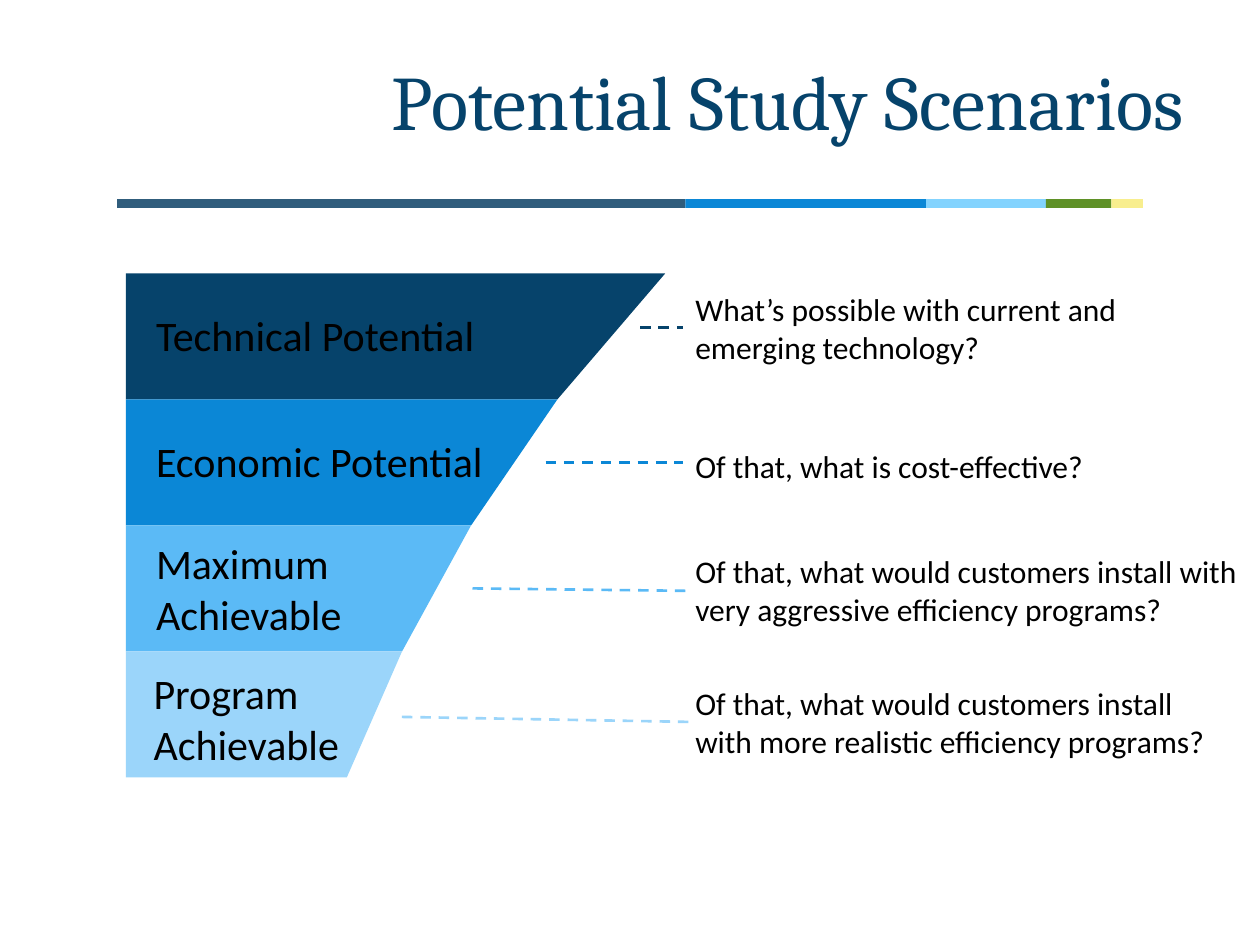
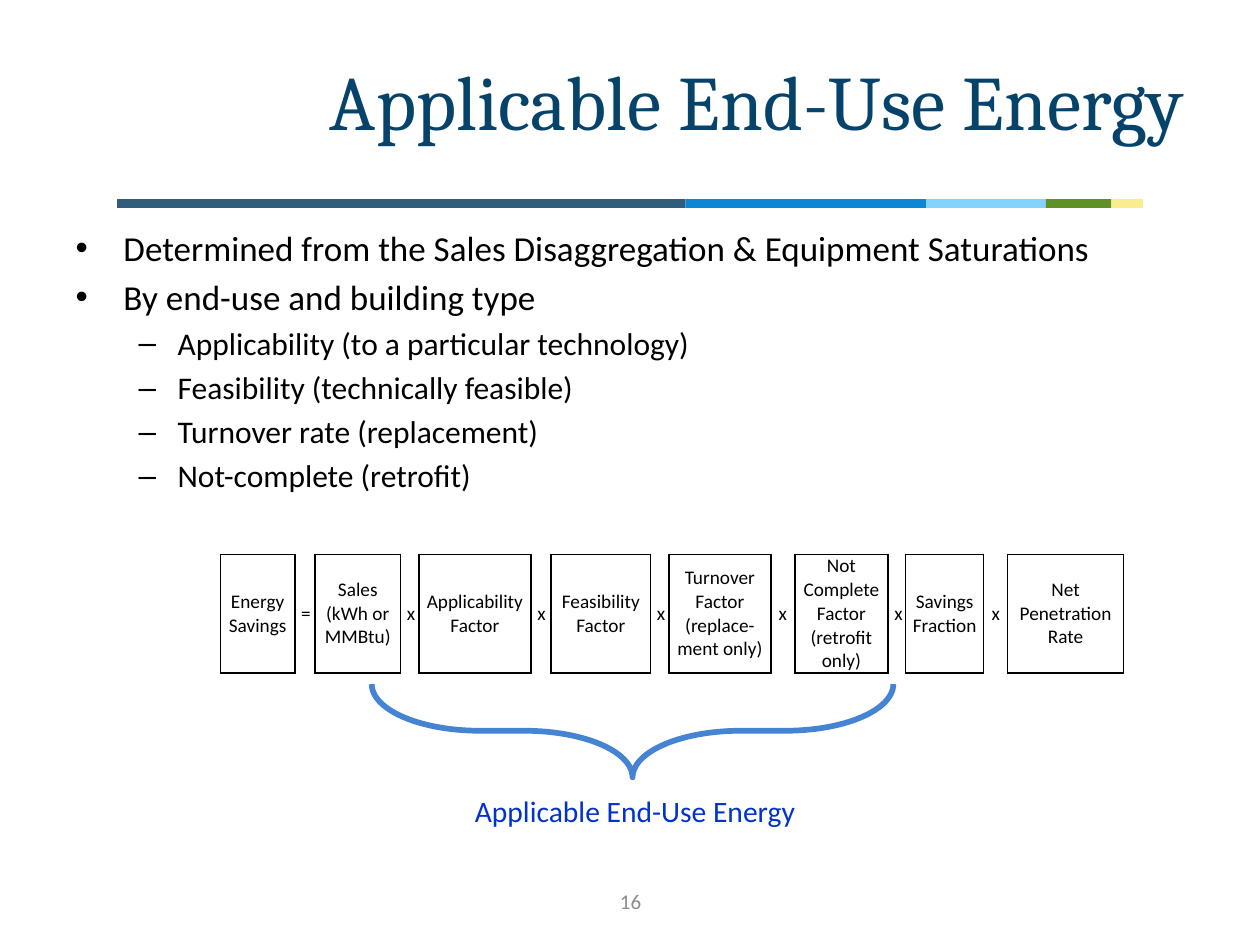
import dataclasses
import typing

import lxml.etree
import pptx
import pptx.dml.color
import pptx.enum.dml
import pptx.enum.shapes
import pptx.enum.text
import pptx.oxml.ns
import pptx.util

Shapes = pptx.enum.shapes.MSO_SHAPE
Align = pptx.enum.text.PP_ALIGN
Anchor = pptx.enum.text.MSO_ANCHOR

# The slide is a grid of 100 columns and 75 rows of square cells.
SLIDE_WIDTH, SLIDE_HEIGHT = pptx.util.Inches(10), pptx.util.Inches(7.5)
CELL = SLIDE_WIDTH // 100

HEADING_FONT, BODY_FONT = "Cambria", "Calibri"
NAVY, BLUE, BLACK, WHITE = "06436B", "0B87D6", "000000", "FFFFFF"
SKY, PALE = "5BBAF6", "9BD5FA"
BRACE_BLUE, CAPTION_BLUE, GREY = "4584D3", "0033CC", "8C8C8C"


class Area(typing.NamedTuple):
    left: float
    top: float
    width: float
    height: float


class Stripe(typing.NamedTuple):
    width: float
    colour: str


class Point(typing.NamedTuple):
    column: float
    row: float


@dataclasses.dataclass(frozen=True)
class Layer:
    label: str
    label_area: Area
    question: str
    question_area: Area
    colour: str
    link_start: Point
    link_end: Point


class Factor(typing.NamedTuple):
    name: str
    width: float
    operator: str = ""
    operator_width: float = 0


class Bullet(typing.NamedTuple):
    text: str
    level: int = 0


class BulletStyle(typing.NamedTuple):
    symbol: str
    size: float
    margin: float
    hanging: float


TITLE_AREA = Area(16.9, 1.7, 78.1, 12.5)
BAND_LEFT, BAND_TOP, BAND_HEIGHT = 9.3, 15.8, 0.7
STRIPES = (
    Stripe(45.1, "305D7C"),
    Stripe(19.1, BLUE),
    Stripe(9.5, "83D3FE"),
    Stripe(5.2, "5F9127"),
    Stripe(2.5, "F8EE8E"),
)

FUNNEL = Area(10, 21.7, 42.8, 10)
FUNNEL_TAPER = 0.8  # each layer is this share of the one above
LAYERS = (
    Layer("Technical Potential", Area(11.4, 24.1, 29.5, 5),
          "What’s possible with current and emerging technology?",
          Area(54.2, 22.5, 44.2, 7.1), NAVY, Point(50.8, 26), Point(54.2, 26)),
    Layer("Economic Potential", Area(11.4, 34.1, 29.5, 5),
          "Of that, what is cost-effective?",
          Area(54.2, 35, 39.2, 7.1), BLUE, Point(43.3, 36.7), Point(54.2, 36.7)),
    Layer("Maximum Achievable", Area(11.4, 42.2, 21.1, 9.1),
          "Of that, what would customers install with very aggressive efficiency programs?",
          Area(54.2, 43.3, 45, 7.1), SKY, Point(37.5, 46.7), Point(55, 46.9)),
    Layer("Program Achievable", Area(11.2, 52.5, 21.2, 9.1),
          "Of that, what would customers install with more realistic efficiency programs?",
          Area(54.2, 53.8, 43.3, 7.1), PALE, Point(31.9, 56.9), Point(55, 57.3)),
)

BODY_AREA = Area(5, 17.5, 90, 49.5)
BULLET_STYLES = (BulletStyle("•", 20, 3.8, 3.8), BulletStyle("–", 18, 8.1, 3.1))
BULLETS = (
    Bullet("Determined from the Sales Disaggregation & Equipment Saturations"),
    Bullet("By end-use and building type"),
    Bullet("Applicability (to a particular technology)", 1),
    Bullet("Feasibility (technically feasible)", 1),
    Bullet("Turnover rate (replacement)", 1),
    Bullet("Not-complete (retrofit)", 1),
)

FORMULA_AREA = Area(17.5, 44, 71.7, 9.4)
FACTORS = (
    Factor("Energy Savings", 5.9, "=", 1.6),
    Factor("Sales (kWh or MMBtu)", 6.8, "x", 1.45),
    Factor("Applicability Factor", 8.9, "x", 1.6),
    Factor("Feasibility Factor", 7.9, "x", 1.45),
    Factor("Turnover Factor (replace-ment only)", 8.1, "x", 1.9),
    Factor("Not Complete Factor (retrofit only)", 7.4, "x", 1.4),
    Factor("Savings Fraction", 6.2, "x", 1.9),
    Factor("Net Penetration Rate", 9.2),
)


def colour_of(code: str) -> pptx.dml.color.RGBColor:
    return pptx.dml.color.RGBColor.from_string(code)


def cells(count: float) -> int:
    return round(count * CELL)


def emu(area: Area) -> list[int]:
    return [cells(length) for length in area]


def format_paragraph(para, size: float, colour: str, align=Align.LEFT, font: str = BODY_FONT) -> None:
    para.alignment = align
    for span in para.runs:
        span.font.name = font
        span.font.size = pptx.util.Pt(size)
        span.font.color.rgb = colour_of(colour)


def move(shape, area: Area) -> None:
    shape.left, shape.top, shape.width, shape.height = emu(area)


def add_text(page, text: str, area: Area, size: float, colour: str = BLACK,
             align=Align.LEFT, anchor=Anchor.TOP) -> None:
    frame = page.shapes.add_textbox(*emu(area)).text_frame
    frame.word_wrap = True
    frame.vertical_anchor = anchor
    frame.text = text
    format_paragraph(frame.paragraphs[0], size, colour, align)


def add_plain_shape(page, kind, area: Area, fill: str | None = None):
    """Add a shape without outline or shadow; no fill colour leaves it hollow."""
    shape = page.shapes.add_shape(kind, *emu(area))
    shape.shadow.inherit = False
    shape.line.fill.background()
    if fill:
        shape.fill.solid()
        shape.fill.fore_color.rgb = colour_of(fill)
    else:
        shape.fill.background()
    return shape


def add_turned_shape(page, kind, area: Area, fill: str | None = None):
    """Add a shape turned clockwise by 90 degrees that covers the area as seen."""
    left = area.left + (area.width - area.height) / 2
    top = area.top + (area.height - area.width) / 2
    shape = add_plain_shape(page, kind, Area(left, top, area.height, area.width), fill)
    shape.rotation = 90
    return shape


def add_dashed_link(page, start: Point, end: Point, colour: str) -> None:
    link = page.shapes.add_connector(
        pptx.enum.shapes.MSO_CONNECTOR.STRAIGHT, *map(cells, (*start, *end)))
    link.line.color.rgb = colour_of(colour)
    link.line.width = pptx.util.Pt(1.5)
    link.line.dash_style = pptx.enum.dml.MSO_LINE.DASH
    lxml.etree.SubElement(link._element.spPr, pptx.oxml.ns.qn("a:effectLst"))


def add_page(deck, layout_name: str, title: str):
    page = deck.slides.add_slide(deck.slide_layouts.get_by_name(layout_name))
    left = BAND_LEFT
    for stripe in STRIPES:
        add_plain_shape(page, Shapes.RECTANGLE,
                        Area(left, BAND_TOP, stripe.width, BAND_HEIGHT), stripe.colour)
        left += stripe.width
    heading = page.shapes.title
    move(heading, TITLE_AREA)
    heading.text_frame.text = title
    heading.text_frame.vertical_anchor = Anchor.MIDDLE
    format_paragraph(heading.text_frame.paragraphs[0], 44, NAVY, Align.RIGHT, HEADING_FONT)
    return page


def fill_bullets(body) -> None:
    move(body, BODY_AREA)
    frame = body.text_frame
    frame.auto_size = pptx.enum.text.MSO_AUTO_SIZE.NONE
    frame.text = "\n".join(bullet.text for bullet in BULLETS)
    for position, (para, bullet) in enumerate(zip(frame.paragraphs, BULLETS)):
        style = BULLET_STYLES[bullet.level]
        para.level = bullet.level
        properties = para._p.get_or_add_pPr()
        properties.set("marL", str(cells(style.margin)))
        properties.set("indent", str(-cells(style.hanging)))
        symbol = lxml.etree.SubElement(properties, pptx.oxml.ns.qn("a:buChar"))
        symbol.set("char", style.symbol)
        para.space_before = pptx.util.Pt(0.2 * style.size if position else 0)
        format_paragraph(para, style.size, BLACK)


def set_borders(cell, sides: str, colour: str) -> None:
    """Draw 1 pt borders; sides are letters in the order L, R, T, B."""
    properties = cell._tc.get_or_add_tcPr()
    for side, position in zip(sides, ("LRTB".index(side) for side in sides)):
        line = lxml.etree.Element(pptx.oxml.ns.qn(f"a:ln{side}"), w=str(pptx.util.Pt(1)))
        solid = lxml.etree.SubElement(line, pptx.oxml.ns.qn("a:solidFill"))
        lxml.etree.SubElement(solid, pptx.oxml.ns.qn("a:srgbClr"), val=colour)
        properties.insert(position, line)


def add_formula(page) -> None:
    entries = [entry for factor in FACTORS
               for entry in ((factor.name, factor.width, BLACK),
                             (factor.operator, factor.operator_width, WHITE))][:-1]
    table = page.shapes.add_table(1, len(entries), *emu(FORMULA_AREA)).table
    table.first_row = table.horz_banding = False
    for column, cell, (text, width, edge) in zip(table.columns, table.rows[0].cells, entries):
        column.width = cells(width)
        cell.text = text
        cell.vertical_anchor = Anchor.MIDDLE
        cell.margin_left = cell.margin_right = cells(0.5)
        cell.margin_top = cell.margin_bottom = 0
        cell.fill.background()
        set_borders(cell, "LR", BLACK)
        set_borders(cell, "TB", edge)
        format_paragraph(cell.text_frame.paragraphs[0], 11, BLACK, Align.CENTER)


def build_scenarios(deck) -> None:
    page = add_page(deck, "Title Only", "Potential Study Scenarios")
    for position, layer in enumerate(LAYERS):
        area = FUNNEL._replace(top=FUNNEL.top + position * FUNNEL.height,
                               width=FUNNEL.width * FUNNEL_TAPER ** position)
        slab = add_turned_shape(page, Shapes.FLOWCHART_MANUAL_INPUT, area, layer.colour)
        slab._element.spPr.xfrm.set("flipH", "1")
    for layer in LAYERS:
        add_text(page, layer.label, layer.label_area, 24)
        add_text(page, layer.question, layer.question_area, 18)
        add_dashed_link(page, layer.link_start, layer.link_end, layer.colour)


def build_energy(deck) -> None:
    page = add_page(deck, "Title and Content", "Applicable End-Use Energy")
    fill_bullets(page.placeholders[1])
    add_text(page, "16", Area(34.2, 69.5, 31.7, 4), 12, GREY, Align.CENTER, Anchor.MIDDLE)
    add_formula(page)
    brace = add_turned_shape(page, Shapes.RIGHT_BRACE, Area(29.5, 54.3, 41.4, 7.4))
    brace.adjustments[0] = 1.16
    brace.line.color.rgb = colour_of(BRACE_BLUE)
    brace.line.width = pptx.util.Pt(3.25)
    add_text(page, "Applicable End-Use Energy", Area(36.7, 62.4, 27.5, 3.9), 16.9, CAPTION_BLUE)


def main() -> None:
    deck = pptx.Presentation()
    deck.slide_width, deck.slide_height = SLIDE_WIDTH, SLIDE_HEIGHT
    build_scenarios(deck)
    build_energy(deck)
    deck.save("out.pptx")


if __name__ == "__main__":
    main()
